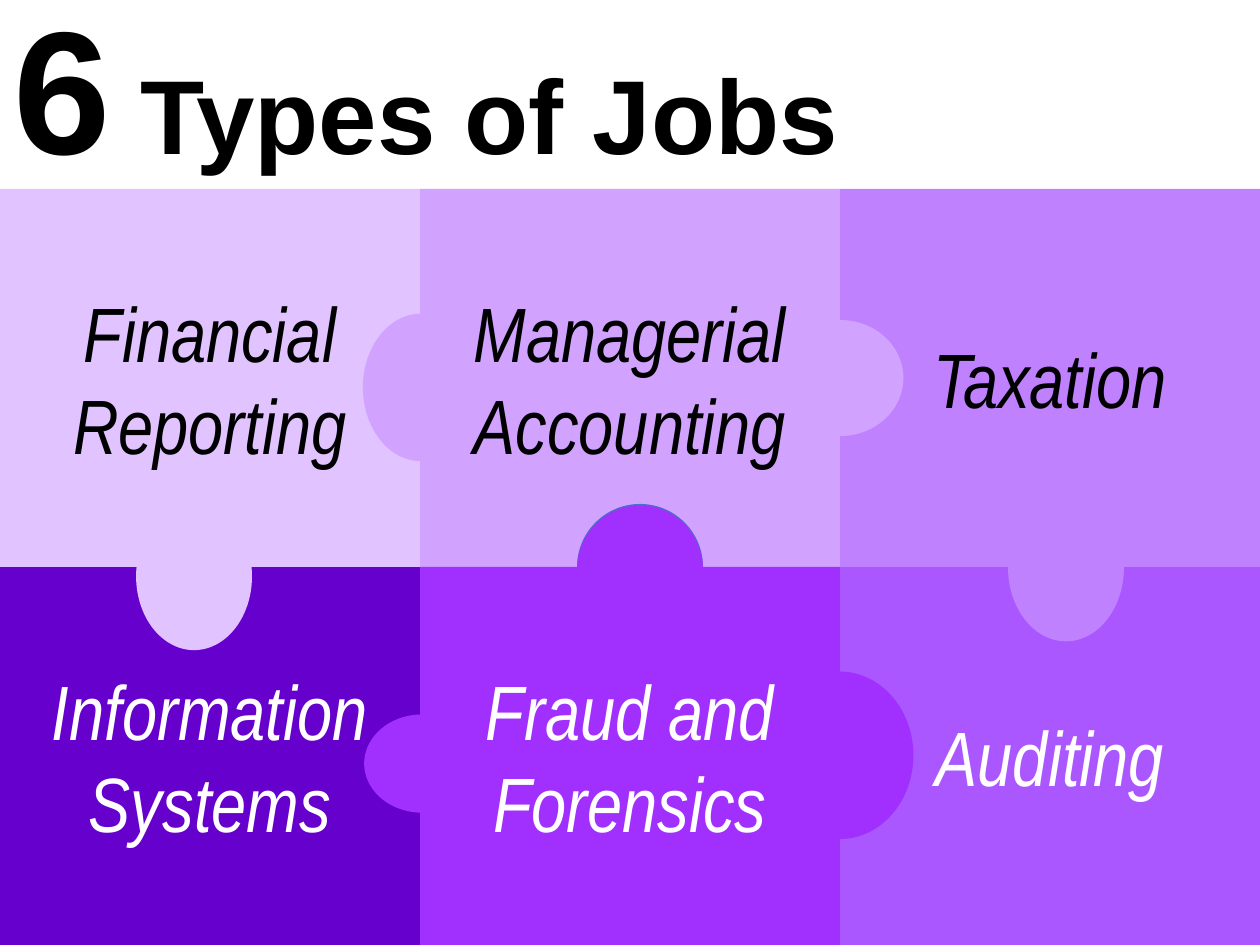
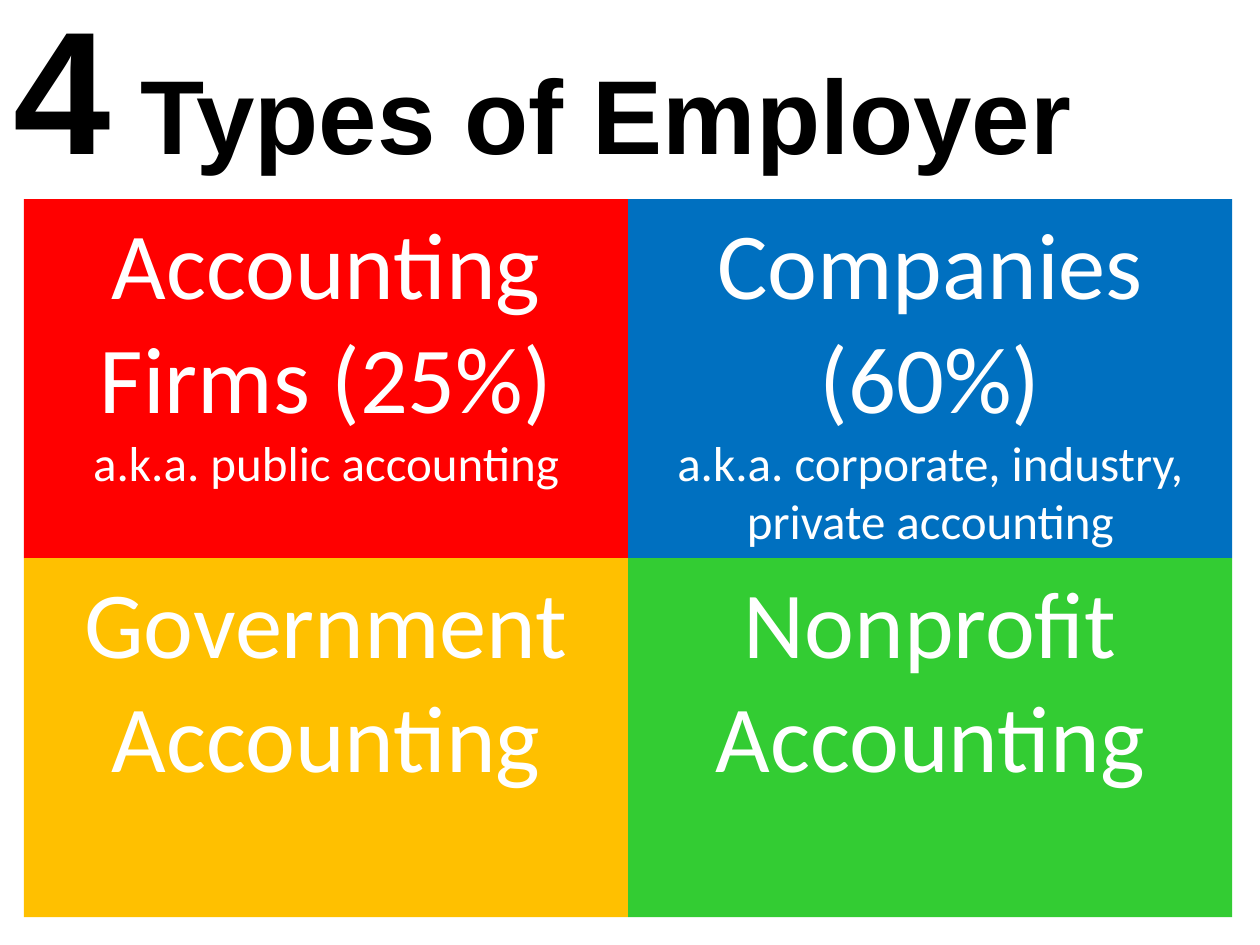
from pptx import Presentation
from pptx.dml.color import RGBColor
from pptx.enum.shapes import MSO_SHAPE
from pptx.enum.text import MSO_ANCHOR, MSO_AUTO_SIZE, PP_ALIGN
from pptx.util import Inches, Pt

RECTANGLE, ELLIPSE = MSO_SHAPE.RECTANGLE, MSO_SHAPE.OVAL
TOP, MIDDLE = MSO_ANCHOR.TOP, MSO_ANCHOR.MIDDLE
LEFT, CENTER = PP_ALIGN.LEFT, PP_ALIGN.CENTER
NO_AUTOFIT = MSO_AUTO_SIZE.NONE

BLACK, WHITE = "000000", "FFFFFF"
VIOLET = "A130FE"
TITLE_ONLY = 5

TITLE_COUNT = {"name": "Arial", "size": Pt(100), "bold": True}
TITLE_WORDS = {**TITLE_COUNT, "size": Pt(60)}
JOB = {"name": "Arial Narrow", "size": Pt(44), "italic": True}
EMPLOYER = {"name": "Calibri", "size": Pt(54)}
ALSO_KNOWN_AS = {"name": "Calibri", "size": Pt(28)}

PIECE_WIDTH, PIECE_HEIGHT, PUZZLE_TOP = 10 / 3, 3, 1.5
CARD_WIDTH, CARD_HEIGHT = 4.795, 2.85
CARDS_LEFT, CARDS_TOP = 0.19, 1.58

# name, column, row, fill, text colour, knobs as (fill, left, top, width, height)
JOBS = [
    ("Information Systems", 0, 1, "6600CC", WHITE, []),
    ("Auditing", 2, 1, "AB57FF", WHITE, []),
    ("Taxation", 2, 0, "C081FF", BLACK, [("C081FF", 8, 3.92, 0.92, 1.17)]),
    ("Financial Reporting", 0, 0, "E1C3FF", BLACK, [("E1C3FF", 1.08, 3.99, 0.92, 1.17)]),
    ("Managerial Accounting", 1, 0, "D1A3FF", BLACK, [
        ("D1A3FF", 2.88, 2.49, 0.92, 1.17),
        ("D1A3FF", 6.17, 2.54, 1, 0.92),
    ]),
    ("Fraud and Forensics", 1, 1, VIOLET, WHITE, [
        ("4472C4", 4.58, 4, 1, 1),
        (VIOLET, 2.89, 5.67, 0.92, 0.78),
        (VIOLET, 4.58, 4.01, 1, 1.02),
        (VIOLET, 6.08, 5.33, 1.17, 1.33),
    ]),
]

EMPLOYERS = [
    (["Accounting", "Firms (25%)"], "a.k.a. public accounting", "FF0000"),
    (["Companies", "(60%)"], "a.k.a. corporate, industry, private accounting", "0070C0"),
    (["Government", "Accounting"], None, "FFC000"),
    (["Nonprofit", "Accounting"], None, "33CC33"),
]


def rgb(value):
    return RGBColor.from_string(value)


def add_run(paragraph, text, style, color):
    run = paragraph.add_run()
    run.text = text
    for attribute, value in style.items():
        setattr(run.font, attribute, value)
    run.font.color.rgb = rgb(color)


def add_title(slide, count, words, width):
    title = slide.shapes.title
    title.left, title.top = Inches(0.01), Inches(-0.21)
    title.width, title.height = Inches(width), Inches(1.78)
    frame = title.text_frame
    frame.auto_size = NO_AUTOFIT
    frame.word_wrap = False
    frame.vertical_anchor = TOP
    paragraph = frame.paragraphs[0]
    paragraph.alignment = LEFT
    add_run(paragraph, count, TITLE_COUNT, BLACK)
    add_run(paragraph, f" {words}", TITLE_WORDS, BLACK)


def add_filled(shapes, preset, fill, *box):
    shape = shapes.add_shape(preset, *map(Inches, box))
    shape.shadow.inherit = False
    shape.fill.solid()
    shape.fill.fore_color.rgb = rgb(fill)
    shape.line.fill.background()
    return shape


def write_lines(shape, lines, color, anchor):
    frame = shape.text_frame
    frame.word_wrap = True
    frame.vertical_anchor = anchor
    for index, (text, style) in enumerate(lines):
        paragraph = frame.add_paragraph() if index else frame.paragraphs[0]
        paragraph.alignment = CENTER
        add_run(paragraph, text, style, color)


def add_puzzle_piece(slide, name, column, row, fill, text_color, knobs):
    piece = slide.shapes.add_group_shape().shapes
    for knob in knobs:
        add_filled(piece, ELLIPSE, *knob)
    body = add_filled(piece, RECTANGLE, fill, column * PIECE_WIDTH,
                      PUZZLE_TOP + row * PIECE_HEIGHT, PIECE_WIDTH, PIECE_HEIGHT)
    write_lines(body, [(name, JOB)], text_color, MIDDLE)


def add_employer_card(slide, index, heading, alias, fill):
    row, column = divmod(index, 2)
    card = add_filled(slide.shapes, RECTANGLE, fill, CARDS_LEFT + column * CARD_WIDTH,
                      CARDS_TOP + row * CARD_HEIGHT, CARD_WIDTH, CARD_HEIGHT)
    lines = [(text, EMPLOYER) for text in heading]
    if alias:
        lines.append((alias, ALSO_KNOWN_AS))
    write_lines(card, lines, WHITE, TOP)


def main():
    deck = Presentation()
    deck.slide_width, deck.slide_height = Inches(10), Inches(7.5)
    layout = deck.slide_layouts[TITLE_ONLY]

    jobs = deck.slides.add_slide(layout)
    add_title(jobs, "6", "Types of Jobs", 6.81)
    for job in JOBS:
        add_puzzle_piece(jobs, *job)

    employers = deck.slides.add_slide(layout)
    add_title(employers, "4", "Types of Employer", 8.68)
    for index, employer in enumerate(EMPLOYERS):
        add_employer_card(employers, index, *employer)

    deck.save("out.pptx")


if __name__ == "__main__":
    main()
